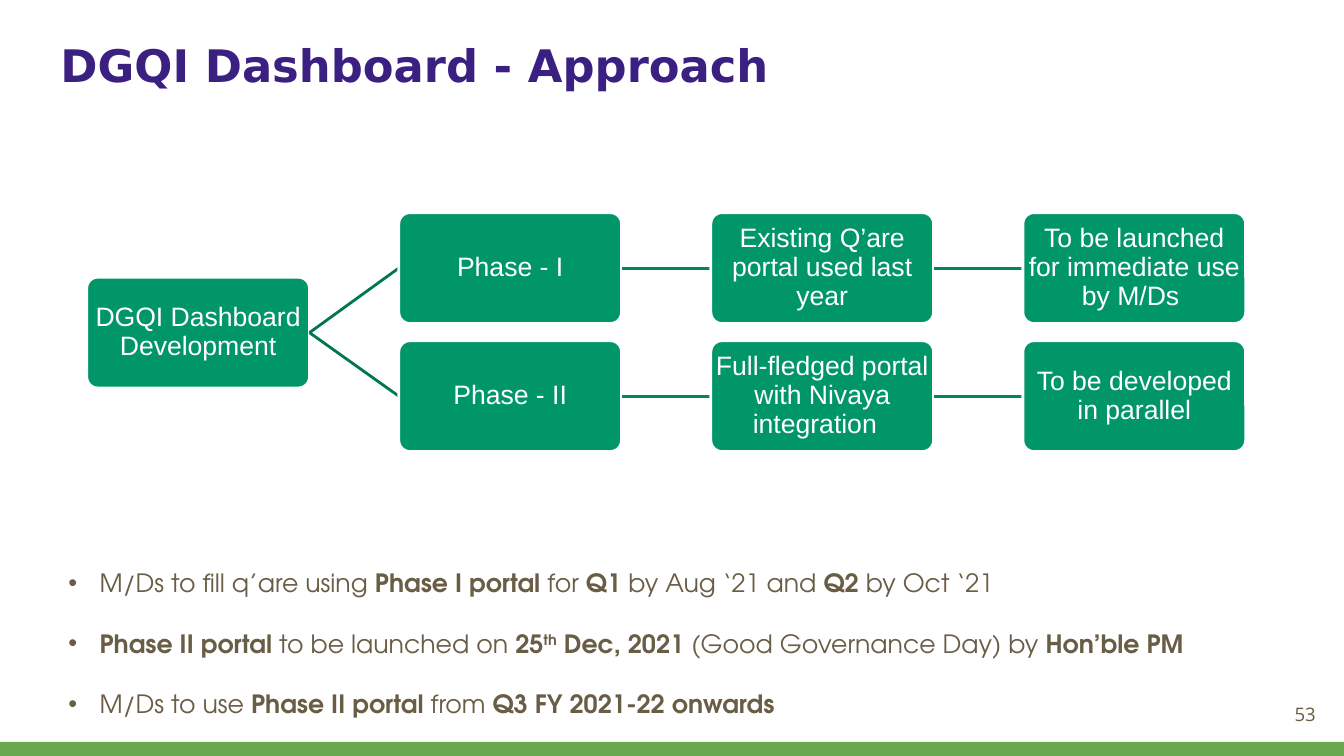
from lxml.etree import SubElement
from pptx import Presentation
from pptx.dml.color import RGBColor
from pptx.enum.shapes import MSO_CONNECTOR, MSO_SHAPE
from pptx.enum.text import MSO_ANCHOR, PP_ALIGN
from pptx.oxml.ns import qn
from pptx.util import Inches, Pt

WHITE = RGBColor(0xFF, 0xFF, 0xFF)
GREEN = RGBColor(0x00, 0x96, 0x68)
FORK = RGBColor(0x00, 0x76, 0x52)
LINK = RGBColor(0x00, 0x87, 0x5B)
BAR = RGBColor(0x6A, 0xA8, 0x4F)
PURPLE = RGBColor(0x3B, 0x20, 0x82)
BROWN = RGBColor(0x69, 0x5D, 0x46)

BOX_W, BOX_H = 2.21, 1.1
LEFT, STEP = 0.86, 3.095
ROOT_Y = 2.75
PHASES = [
    (2.11, ["Phase - I", "Existing Q’are portal used last year",
            "To be launched for immediate use by M/Ds "]),
    (3.38, ["Phase - II", "Full-fledged portal with Nivaya integration  ",
            "To be developed in parallel"]),
]
# Each run: text, bold, superscript
BULLETS = [
    [("M/Ds to fill q’are using ", False, False), ("Phase I portal ", True, False),
     ("for ", False, False), ("Q1 ", True, False),
     ("by Aug ‘21 and ", False, False), ("Q2", True, False),
     (" by Oct ‘21", False, False)],
    [("Phase II portal ", True, False), ("to be launched on ", False, False),
     ("25", True, False), ("th", True, True), (" Dec, 2021 ", True, False),
     ("(Good Governance Day) by ", False, False), ("Hon’ble PM", True, False)],
    [("M/Ds to use ", False, False), ("Phase II portal ", True, False),
     ("from ", False, False), ("Q3 FY 2021-22 onwards", True, False)],
]


def set_frame(shape, side, top, anchor=MSO_ANCHOR.TOP):
    """Wrap the text, set its insets and anchor, and return the frame."""
    frame = shape.text_frame
    frame.word_wrap = True
    frame.margin_left = frame.margin_right = Inches(side)
    frame.margin_top = frame.margin_bottom = Inches(top)
    frame.vertical_anchor = anchor
    return frame


def add_run(para, text, font, size, color, bold=False):
    run = para.add_run()
    run.text = text
    run.font.name = font
    run.font.size = Pt(size)
    run.font.color.rgb = color
    run.font.bold = bold
    return run


deck = Presentation()
deck.slide_width, deck.slide_height = Inches(13.33), Inches(7.5)
slide = deck.slides.add_slide(deck.slide_layouts[6])
shapes = slide.shapes

bar = shapes.add_shape(MSO_SHAPE.RECTANGLE, 0, Inches(7.36), Inches(13.33), Inches(0.14))
bar.shadow.inherit = False
bar.fill.solid()
bar.fill.fore_color.rgb = BAR
bar.line.fill.background()

title = shapes.add_textbox(Inches(0.47), Inches(0.24), Inches(12.42), Inches(1.03))
frame = set_frame(title, 0.13, 0.13)
add_run(frame.paragraphs[0], "DGQI Dashboard - Approach", "DejaVu Sans", 32, PURPLE, True)

number = shapes.add_textbox(Inches(12.35), Inches(6.8), Inches(0.8), Inches(0.57))
para = set_frame(number, 0.1, 0.1, MSO_ANCHOR.MIDDLE).paragraphs[0]
para.alignment = PP_ALIGN.RIGHT
add_run(para, "53", "Open Sans", 13.3, BROWN)

# Flow: the root forks into two rows of three boxes
nodes = [(0, ROOT_Y, "DGQI Dashboard Development")]
nodes += [(col, top, text) for top, row in PHASES for col, text in enumerate(row, 1)]
root = last = None
for col, top, text in nodes:
    left = LEFT + col * STEP
    line = None
    if col:
        source = root if col == 1 else last
        line = shapes.add_connector(MSO_CONNECTOR.STRAIGHT, 0, 0, 0, 0)
        line.line.color.rgb = FORK if col == 1 else LINK
        line.line.width = Pt(2)
        SubElement(line._element.spPr, qn("a:effectLst"))
    box = shapes.add_shape(MSO_SHAPE.ROUNDED_RECTANGLE, Inches(left), Inches(top),
                           Inches(BOX_W), Inches(BOX_H))
    box.adjustments[0] = 0.1
    box.shadow.inherit = False
    box.fill.solid()
    box.fill.fore_color.rgb = GREEN
    box.line.color.rgb = WHITE
    box.line.width = Pt(2)
    para = set_frame(box, 0.01, 0.01, MSO_ANCHOR.MIDDLE).paragraphs[0]
    para.alignment = PP_ALIGN.CENTER
    para.line_spacing = 0.9
    add_run(para, text, "Arial", 19, WHITE)
    if line is not None:
        line.begin_connect(source, 3)
        line.end_connect(box, 1)
    else:
        root = box
    last = box

notes = shapes.add_textbox(Inches(0.58), Inches(5.58), Inches(12.58), Inches(1.62))
frame = set_frame(notes, 0.1, 0.05)
for index, runs in enumerate(BULLETS):
    para = frame.add_paragraph() if index else frame.paragraphs[0]
    if index:
        para.space_before = Pt(21.6)
    props = para._p.get_or_add_pPr()
    props.set("marL", str(Inches(0.31)))
    props.set("indent", str(-Inches(0.31)))
    SubElement(props, qn("a:buFont"), typeface="Arial")
    SubElement(props, qn("a:buChar"), char="•")
    for text, bold, raised in runs:
        run = add_run(para, text, "TeX Gyre Adventor", 18, BROWN, bold)
        if raised:
            run.font._element.set("baseline", "30000")

deck.save("out.pptx")
